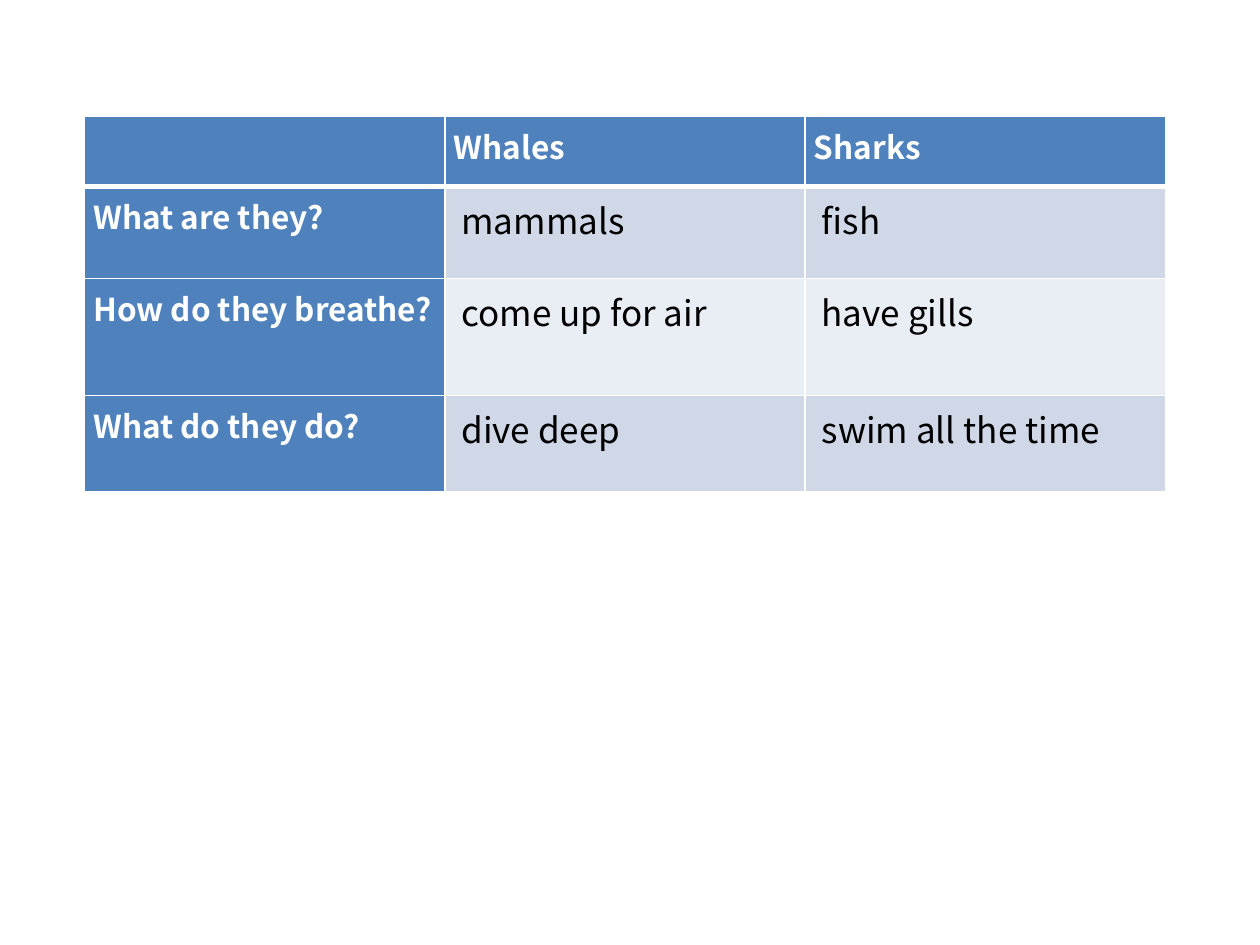
from dataclasses import dataclass

from lxml import etree
from pptx import Presentation
from pptx.dml.color import RGBColor
from pptx.enum.text import PP_ALIGN
from pptx.oxml.ns import qn
from pptx.table import _Cell
from pptx.util import Inches, Pt

JUSTIFY = PP_ALIGN.JUSTIFY
FONT = "Noto Sans CJK SC"
COLORS = {
    "heading": "4F81BD",
    "odd_band": "D0D8E8",
    "even_band": "E9EDF4",
    "white": "FFFFFF",
    "black": "000000",
}


@dataclass
class Row:
    height: float
    texts: tuple[str, str, str]


ROWS = [
    Row(0.56, ("", "Whales", "Sharks")),
    Row(0.73, ("What are they?", " mammals", " fish")),
    Row(0.93, ("How do they breathe?", " come up for air", " have gills")),
    Row(0.76, ("What do they do?", " dive deep", " swim all the time")),
]
COLUMN_WIDTH = 2.86


def set_border(cell: _Cell, side: str, width: float) -> None:
    tcPr = cell._tc.get_or_add_tcPr()
    ln = etree.SubElement(tcPr, qn(f"a:ln{side}"), w=str(Pt(width)))
    fill = etree.SubElement(ln, qn("a:solidFill"))
    etree.SubElement(fill, qn("a:srgbClr"), val=COLORS["white"])


def write_text(cell: _Cell, text: str, *, size: int, color: str, bold: bool) -> None:
    p = cell.text_frame.paragraphs[0]
    p.alignment = JUSTIFY
    p.line_spacing = 1.15
    if not text:
        return
    r = p.add_run()
    r.text = text
    r.font.name = FONT
    r.font.size = Pt(size)
    r.font.bold = bold
    r.font.color.rgb = RGBColor.from_string(COLORS[color])


def draw_cell(cell: _Cell, text: str, row: int, col: int) -> None:
    heading = row == 0 or col == 0
    band = "odd_band" if row % 2 else "even_band"
    cell.margin_left = cell.margin_right = Inches(0.07)
    cell.margin_top = cell.margin_bottom = 0
    for side in "LRTB":
        under_header = (row, side) in ((0, "B"), (1, "T"))
        set_border(cell, side, 3 if under_header else 1)
    cell.fill.solid()
    cell.fill.fore_color.rgb = RGBColor.from_string(COLORS["heading" if heading else band])
    write_text(
        cell,
        text,
        size=18 if heading else 20,
        color="white" if heading else "black",
        bold=heading,
    )


def main() -> None:
    prs = Presentation()
    prs.slide_width, prs.slide_height = Inches(10), Inches(7.5)
    s = prs.slides.add_slide(prs.slide_layouts[6])
    columns = len(ROWS[0].texts)
    table = s.shapes.add_table(
        len(ROWS),
        columns,
        Inches(0.67),
        Inches(0.92),
        Inches(COLUMN_WIDTH * columns),
        Inches(sum(row.height for row in ROWS)),
    ).table
    for column in table.columns:
        column.width = Inches(COLUMN_WIDTH)
    for i, row in enumerate(ROWS):
        table.rows[i].height = Inches(row.height)
        for j, text in enumerate(row.texts):
            draw_cell(table.cell(i, j), text, i, j)
    prs.save("out.pptx")


if __name__ == "__main__":
    main()
